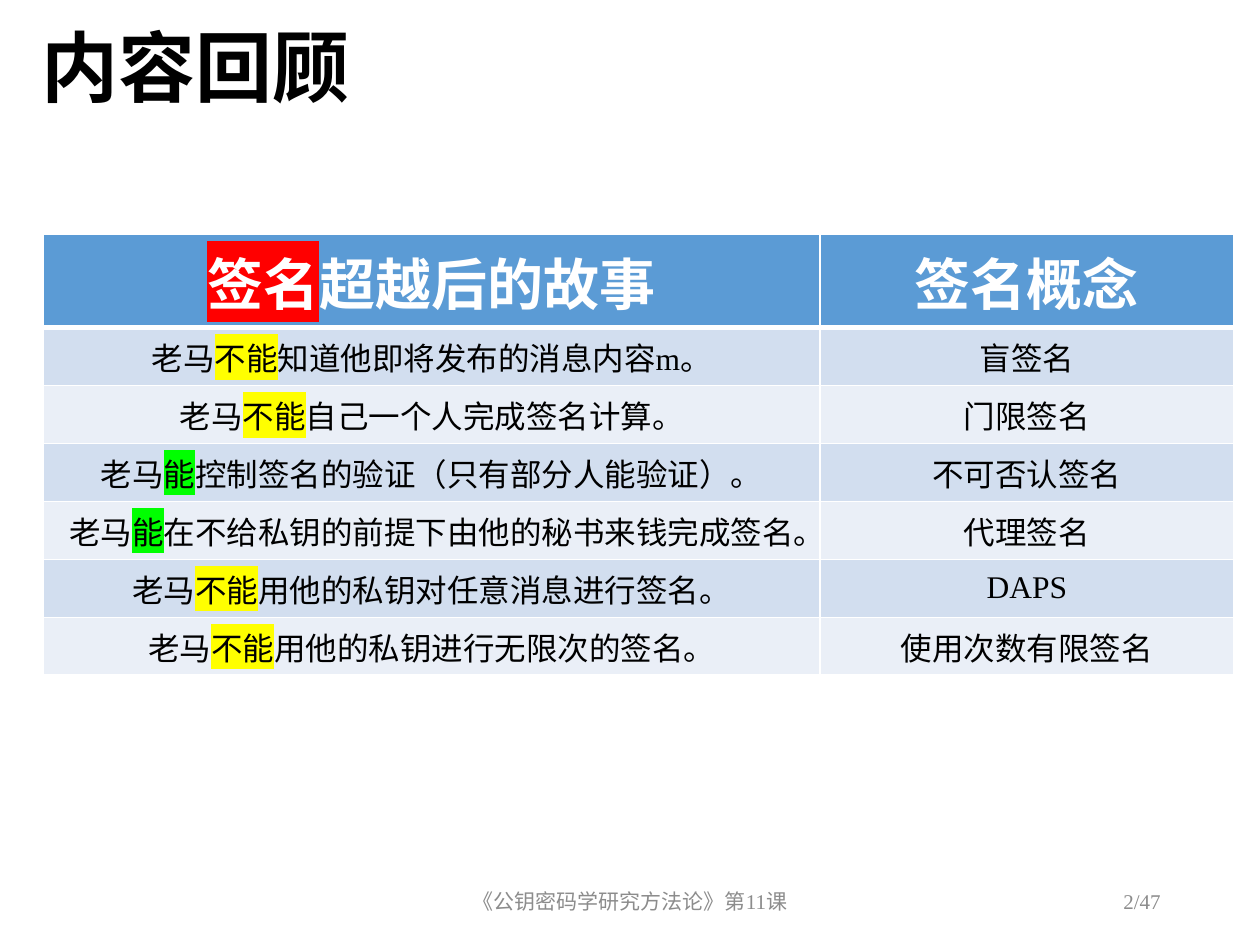
from lxml.etree import SubElement
from pptx import Presentation
from pptx.dml.color import RGBColor
from pptx.enum.text import MSO_ANCHOR, PP_ALIGN
from pptx.oxml.ns import qn
from pptx.util import Inches, Pt

BLACK = RGBColor(0x00, 0x00, 0x00)
WHITE = RGBColor(0xFF, 0xFF, 0xFF)
GREY = RGBColor(0x8C, 0x8C, 0x8C)
RED = RGBColor(0xFF, 0x00, 0x00)
YELLOW = RGBColor(0xFF, 0xFF, 0x00)
GREEN = RGBColor(0x00, 0xFF, 0x00)
HEADER_BLUE = RGBColor(0x5B, 0x9B, 0xD5)
BANDS = (RGBColor(0xD2, 0xDE, 0xEF), RGBColor(0xEA, 0xEF, 0xF7))

SERIF = "Times New Roman"
SANS = "Noto Sans CJK SC"

COLUMN_WIDTHS = (6.17, 3.28)
HEADER_HEIGHT = 0.74
STORY_HEIGHT = 0.46
HEADINGS = ([("签名", RED), "超越后的故事"], ["签名概念"])
CANNOT = ("不能", YELLOW)
CAN = ("能", GREEN)
STORIES = [
    (CANNOT, "知道他即将发布的消息内容m。", "盲签名"),
    (CANNOT, "自己一个人完成签名计算。", "门限签名"),
    (CAN, "控制签名的验证（只有部分人能验证）。", "不可否认签名"),
    (CAN, "在不给私钥的前提下由他的秘书来钱完成签名。", "代理签名"),
    (CANNOT, "用他的私钥对任意消息进行签名。", "DAPS"),
    (CANNOT, "用他的私钥进行无限次的签名。", "使用次数有限签名"),
]


def write(frame, parts, *, size, color, font=SERIF, bold=False,
          align=PP_ALIGN.LEFT, line_spacing=None):
    """Fill a frame with one paragraph; a part is text or (text, highlight)."""
    paragraph = frame.paragraphs[0]
    paragraph.alignment = align
    paragraph.line_spacing = line_spacing
    for part in parts:
        text, highlight = (part, None) if isinstance(part, str) else part
        run = paragraph.add_run()
        run.text = text
        run.font.size = Pt(size)
        run.font.bold = bold
        run.font.color.rgb = color
        properties = run.font._element
        if highlight is not None:
            marker = SubElement(properties, qn("a:highlight"))
            SubElement(marker, qn("a:srgbClr"), val=str(highlight))
        run.font.name = font
        SubElement(properties, qn("a:ea"), typeface=SANS)


def add_label(slide, box, text, anchor=MSO_ANCHOR.MIDDLE, **text_format):
    frame = slide.shapes.add_textbox(*map(Inches, box)).text_frame
    frame.word_wrap = True
    frame.vertical_anchor = anchor
    write(frame, [text], **text_format)


def set_borders(cell, bottom):
    properties = cell._tc.get_or_add_tcPr()
    for side, width in (("L", 1), ("R", 1), ("T", 1), ("B", bottom)):
        line = SubElement(properties, qn(f"a:ln{side}"), w=str(Pt(width)))
        fill = SubElement(line, qn("a:solidFill"))
        SubElement(fill, qn("a:srgbClr"), val=str(WHITE))


def fill_row(row, contents, fill, height, bottom=1, **text_format):
    row.height = Inches(height)
    for cell, parts in zip(row.cells, contents):
        set_borders(cell, bottom)
        cell.fill.solid()
        cell.fill.fore_color.rgb = fill
        cell.vertical_anchor = MSO_ANCHOR.MIDDLE
        write(cell.text_frame, parts, align=PP_ALIGN.CENTER, **text_format)


def add_story_table(slide, left, top):
    table = slide.shapes.add_table(
        len(STORIES) + 1, len(COLUMN_WIDTHS), Inches(left), Inches(top),
        Inches(sum(COLUMN_WIDTHS)),
        Inches(HEADER_HEIGHT + STORY_HEIGHT * len(STORIES))).table
    for column, width in zip(table.columns, COLUMN_WIDTHS):
        column.width = Inches(width)
    header, *story_rows = table.rows
    fill_row(header, HEADINGS, HEADER_BLUE, HEADER_HEIGHT, bottom=3,
             size=32, color=WHITE, bold=True)
    for index, (row, story) in enumerate(zip(story_rows, STORIES)):
        ability, deed, concept = story
        fill_row(row, (["老马", ability, deed], [concept]), BANDS[index % 2],
                 STORY_HEIGHT, size=18, color=BLACK)


def add_footer(slide, top, height):
    add_label(slide, (3.31, top, 3.38, height), "《公钥密码学研究方法论》第11课",
              size=12, color=GREY, align=PP_ALIGN.CENTER)
    add_label(slide, (7.06, top, 2.25, height), "2/47",
              size=12, color=GREY, align=PP_ALIGN.RIGHT)


def main():
    deck = Presentation()
    deck.slide_width, deck.slide_height = Inches(10), Inches(7.5)
    slide = deck.slides.add_slide(deck.slide_layouts[6])
    add_label(slide, (0.23, 0.19, 9.57, 0.92), "内容回顾", MSO_ANCHOR.TOP,
              size=44, color=BLACK, font=SANS, bold=True, line_spacing=0.9)
    add_story_table(slide, left=0.34, top=1.86)
    add_footer(slide, top=6.95, height=0.4)
    deck.save("out.pptx")


if __name__ == "__main__":
    main()
